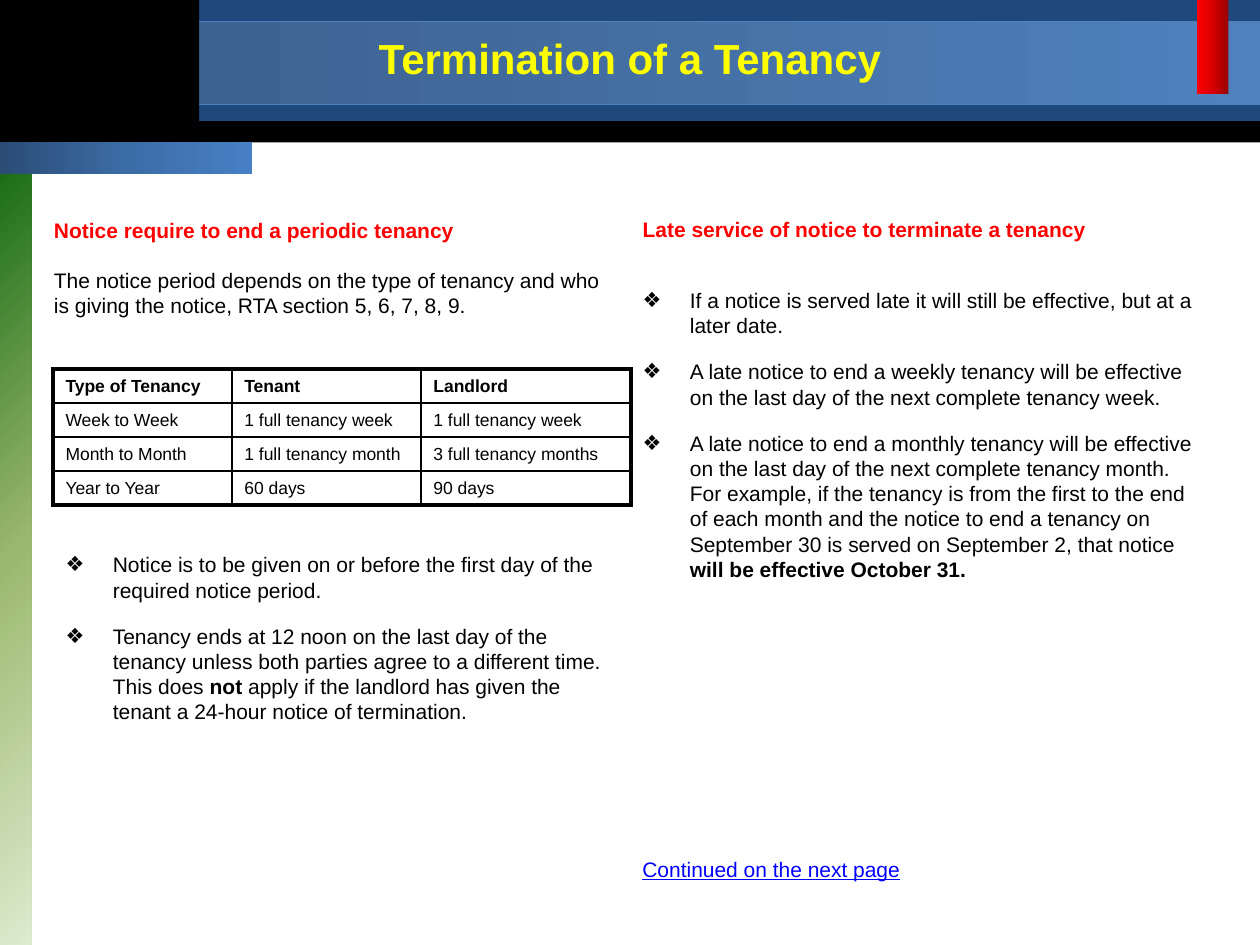
import pptx
import pptx.util
import pptx.dml.color
import pptx.enum.shapes
import pptx.enum.text
import pptx.oxml.ns
from lxml import etree

Inches, Pt, qn = pptx.util.Inches, pptx.util.Pt, pptx.oxml.ns.qn
COLORS = {"black": "000000", "navy": "1F497D", "blue": "4F81BD", "red": "FF0000",
          "yellow": "FFFF00", "link": "0000FF"}
BAND = ["395C87", "4F81BD"]
GREEN = ["DDEBCF", "9CB86E", "156B13"]
RED = ["FF0000", "D70000", "970000"]
STRIP = ["2A4C75", "3C6CA6", "4780C5"]


def rgb(name):
    return pptx.dml.color.RGBColor.from_string(COLORS[name])


def sub(parent, tag, **attrs):
    return etree.SubElement(parent, qn(tag), {k: str(v) for k, v in attrs.items()})


class SlideBuilder:
    font = "Arial"
    indent = 0.375

    def __init__(self, slide):
        self.s = slide

    def rect(self, box, fill=None, stops=None, corner=False, line=None):
        """Solid or gradient bar; corner makes the gradient spread from bottom right."""
        sp = self.s.shapes.add_shape(pptx.enum.shapes.MSO_SHAPE.RECTANGLE, *map(Inches, box))
        sp.shadow.inherit = False
        if line:
            sp.line.color.rgb = rgb(line)
            sp.line.width = Pt(0.75)
        else:
            sp.line.fill.background()
        if fill:
            sp.fill.solid()
            sp.fill.fore_color.rgb = rgb(fill)
            return
        sp.fill.gradient()
        grad = sp.element.spPr.find(qn("a:gradFill"))
        for child in list(grad):
            grad.remove(child)
        stop_list = sub(grad, "a:gsLst")
        for i, color in enumerate(stops):
            stop = sub(stop_list, "a:gs", pos=100000 * i // (len(stops) - 1))
            sub(stop, "a:srgbClr", val=color)
        if corner:
            circle = sub(grad, "a:path", path="circle")
            sub(circle, "a:fillToRect", l=100000, t=100000, r=0, b=0)
        else:
            sub(grad, "a:lin", ang=0, scaled=0)

    def runs(self, p, runs, size=12):
        """Fill a paragraph from (text, format) pairs."""
        for text, fmt in runs:
            r = p.add_run()
            r.text = text
            values = {"name": self.font, "size": Pt(size), "bold": False, **fmt}
            r.font.color.rgb = rgb(values.pop("color", "black"))
            for key, value in values.items():
                setattr(r.font, key, value)

    def place(self, sp, box):
        """Position a placeholder and bring it in front of the bars."""
        sp.left, sp.top, sp.width, sp.height = map(Inches, box)
        sp.element.getparent().append(sp.element)
        sp.text_frame.auto_size = pptx.enum.text.MSO_AUTO_SIZE.NONE
        return sp.text_frame

    def title(self, box, text):
        tf = self.place(self.s.shapes.title, box)
        tf.vertical_anchor = pptx.enum.text.MSO_ANCHOR.MIDDLE
        p = tf.paragraphs[0]
        p.alignment = pptx.enum.text.PP_ALIGN.CENTER
        self.runs(p, [(text, {"bold": True, "color": "yellow"})], 24)

    def bullets(self, idx, box, items, heading=None):
        tf = self.place(self.s.placeholders[idx], box)
        paragraphs = ([(heading, False)] if heading else []) + [(i, True) for i in items]
        for n, (runs, bulleted) in enumerate(paragraphs):
            p = tf.add_paragraph() if n else tf.paragraphs[0]
            pPr = p._p.get_or_add_pPr()
            indent = Inches(self.indent) if bulleted else 0
            pPr.set("marL", str(indent))
            pPr.set("indent", str(-indent))
            if bulleted:
                sub(pPr, "a:buFont", typeface=self.font)
                sub(pPr, "a:buChar", char="❖")
            else:
                sub(pPr, "a:buNone")
            p.space_before = Pt(6 if n else 0)
            p.space_after = Pt(6 if bulleted else 20)
            self.runs(p, runs)

    def text(self, box, paragraphs, gap=0):
        tf = self.s.shapes.add_textbox(*map(Inches, box)).text_frame
        tf.word_wrap = True
        for n, runs in enumerate(paragraphs):
            p = tf.add_paragraph() if n else tf.paragraphs[0]
            p.space_before = Pt(gap if n else 0)
            self.runs(p, runs)

    def table(self, left, top, widths, row_height, rows):
        n_rows, n_cols = len(rows), len(widths)
        table = self.s.shapes.add_table(n_rows, n_cols, Inches(left), Inches(top),
                                        Inches(sum(widths)), Inches(row_height * n_rows)).table
        table.first_row = table.horz_banding = False
        for column, width in zip(table.columns, widths):
            column.width = Inches(width)
        for i, row in enumerate(rows):
            for j, text in enumerate(row):
                cell = table.cell(i, j)
                cell.vertical_anchor = pptx.enum.text.MSO_ANCHOR.MIDDLE
                self.runs(cell.text_frame.paragraphs[0], [(text, {"bold": i == 0})], 10)
                # Thick outer frame, thin inner lines
                outer = {"L": j == 0, "R": j == n_cols - 1, "T": i == 0, "B": i == n_rows - 1}
                for side, thick in outer.items():
                    ln = sub(cell._tc.get_or_add_tcPr(), "a:ln" + side,
                             w=Pt(2.25 if thick else 1))
                    sub(sub(ln, "a:solidFill"), "a:srgbClr", val=COLORS["black"])
                cell.fill.background()


def main():
    prs = pptx.Presentation()
    prs.slide_width, prs.slide_height = Inches(10), Inches(7.5)
    s = prs.slides.add_slide(prs.slide_layouts[3])
    b = SlideBuilder(s)
    for sp in list(s.placeholders):
        if sp.placeholder_format.idx > 2:
            sp.element.getparent().remove(sp.element)

    # Header and side bars
    b.rect((0, 0.01, 10, 1.12), "black")
    b.rect((1.58, 0, 8.42, 0.96), "navy")
    b.rect((0, 0.17, 10, 0.66), stops=BAND, line="blue")
    b.rect((0, 1.25, 0.25, 6.25), stops=GREEN, corner=True)
    b.rect((9.5, 0, 0.25, 0.75), stops=RED)
    b.rect((0, 0, 1.58, 1.17), "black")
    b.rect((0, 1.13, 2, 0.25), stops=STRIP)
    b.title((1.25, 0.17, 7.5, 0.58), "Termination of a Tenancy")

    # Left column
    bold, heading = {"bold": True}, {"bold": True, "color": "red"}
    b.text((0.33, 1.68, 4.67, 0.91), [
        [("Notice require to end a periodic tenancy", heading)],
        [("The notice period depends on the type of tenancy and who is giving the notice, "
          "RTA section 5, 6, 7, 8, 9.", {})]], gap=14)
    b.table(0.42, 2.93, [1.42, 1.5, 1.67], 0.27, [
        ["Type of Tenancy", "Tenant", "Landlord"],
        ["Week to Week", "1 full tenancy week", "1 full tenancy week"],
        ["Month to Month", "1 full tenancy month", "3 full tenancy months"],
        ["Year to Year", "60 days", "90 days"]])
    b.bullets(1, (0.42, 4.33, 4.58, 2.08), [
        [("Notice is to be given on or before the first day of the required notice period.", {})],
        [("Tenancy ends at 12 noon on the last day of the tenancy unless both parties agree "
          "to a different time. This does ", {}), ("not ", bold),
         ("apply if the landlord has given the tenant a 24-hour notice of termination.", {})]])

    # Right column
    b.bullets(2, (5, 1.67, 4.58, 4), [
        [("If a notice is served late it will still be effective, but at a later date.", {})],
        [("A late notice to end a weekly tenancy will be effective on the last day of the "
          "next complete tenancy week.", {})],
        [("A late notice to end a monthly tenancy will be effective on the last day of the "
          "next complete tenancy month. For example, if the tenancy is from the first to the "
          "end of each month and the notice to end a tenancy on September 30 is served on "
          "September 2, that notice ", {}), ("will be effective October 31.", bold)]],
        heading=[("Late service of notice to terminate a tenancy", heading)])
    b.text((5, 6.75, 2.83, 0.3),
           [[("Continued on the next page", {"color": "link", "underline": True})]])

    prs.save("out.pptx")


if __name__ == "__main__":
    main()
